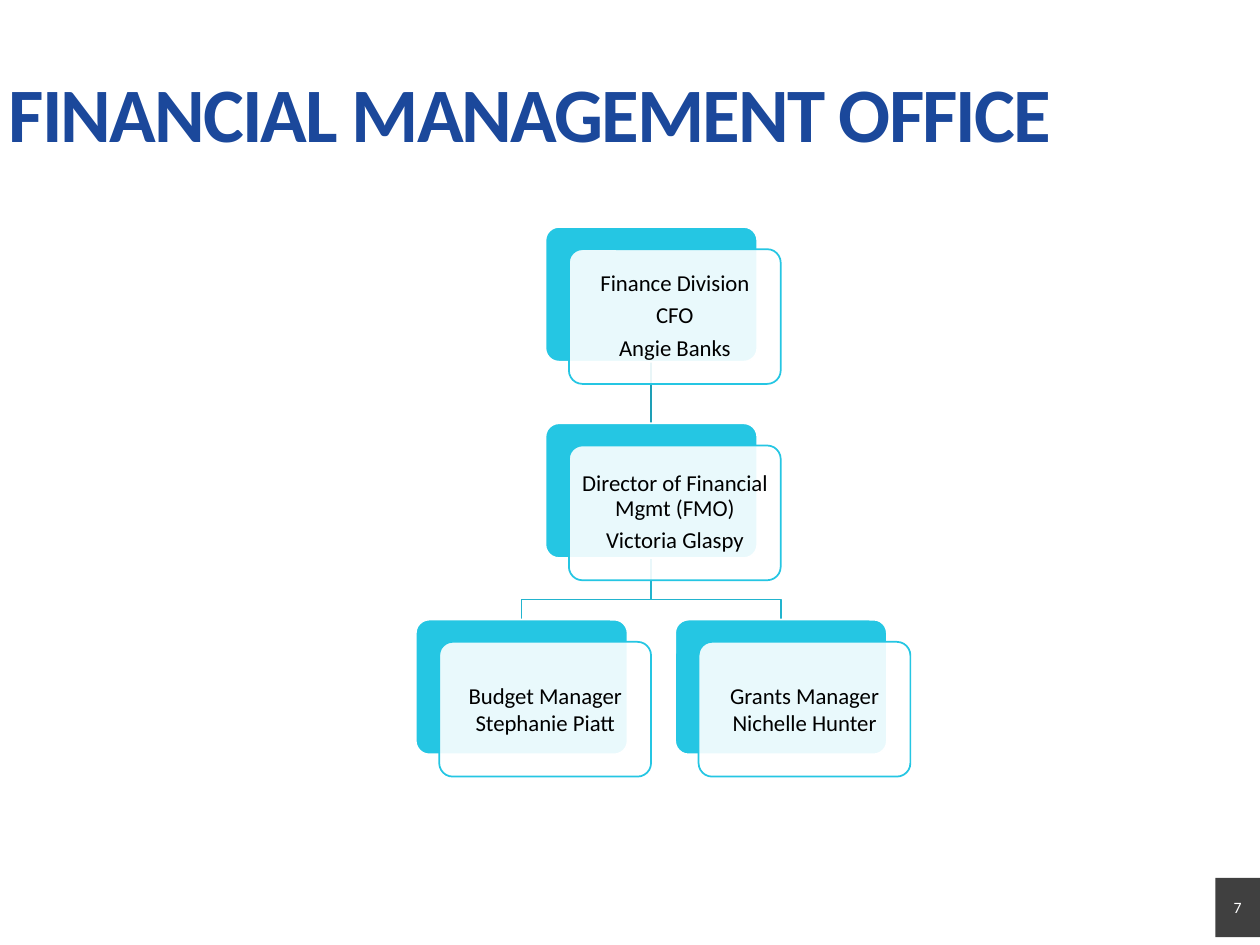
from pptx import Presentation
from pptx.util import Pt
from pptx.dml.color import RGBColor as RGB
from pptx.enum.shapes import MSO_SHAPE as Shape, MSO_CONNECTOR as Link
from pptx.enum.text import PP_ALIGN as Align, MSO_ANCHOR as Anchor, MSO_AUTO_SIZE as Fit
from pptx.oxml.ns import qn
from lxml.etree import SubElement as Sub
from dataclasses import dataclass

TITLE = "FINANCIAL MANAGEMENT OFFICE"
PAGE = "7"
STAFF = [
    dict(row=0, col=0, boss=None, gap=True,
         text=["Finance Division", "CFO", "Angie Banks"]),
    dict(row=1, col=0, boss=0, gap=True,
         text=["Director of Financial Mgmt (FMO)", "Victoria Glaspy"]),
    dict(row=2, col=-1, boss=1, gap=False,
         text=["Budget Manager", "Stephanie Piatt"]),
    dict(row=2, col=1, boss=1, gap=False,
         text=["Grants Manager", "Nichelle Hunter"]),
]


@dataclass
class Theme:
    font: str = "Calibri"
    title: str = "1B489B"
    card: str = "25C6E3"
    stem: str = "1E9FB6"
    fork: str = "22B4CE"
    badge: str = "404040"
    white: str = "FFFFFF"
    black: str = "000000"
    big: int = 44
    body: int = 13
    small: int = 9


T = Theme()
MID, TOP = 372.2, 129.7
WIDE, HIGH = 121, 77
STEP, PITCH = 74.1, 112.2
DX, DY = 13.4, 12.7
BEND = 23.7


def style(frame, size, color, bold=False):
    for para in frame.paragraphs:
        for run in para.runs:
            font = run.font
            font.name, font.size, font.bold = T.font, Pt(size), bold
            font.color.rgb = RGB.from_string(color)


def inset(frame, x, y):
    frame.margin_left = frame.margin_right = Pt(x)
    frame.margin_top = frame.margin_bottom = Pt(y)


def box(slide, kind, x, y, w, h, fill, line=None):
    item = slide.shapes.add_shape(kind, Pt(x), Pt(y), Pt(w), Pt(h))
    item.shadow.inherit = False
    item.fill.solid()
    item.fill.fore_color.rgb = RGB.from_string(fill)
    if line:
        item.adjustments[0] = 0.1
        ink(item, line)
    else:
        item.line.fill.background()
    return item


def ink(item, color):
    item.line.color.rgb = RGB.from_string(color)
    item.line.width = Pt(1)


def spot(post):
    return MID + post["col"] * STEP, TOP + post["row"] * PITCH


def card(slide, post):
    x, y = spot(post)
    x -= WIDE / 2
    back = box(slide, Shape.ROUNDED_RECTANGLE, x, y, WIDE, HIGH, T.card, T.white)
    front = box(slide, Shape.ROUNDED_RECTANGLE, x + DX, y + DY, WIDE, HIGH,
                T.white, T.card)
    tint = front.fill._xPr.find(qn("a:solidFill"))[0]
    Sub(tint, qn("a:alpha")).set("val", "90000")
    frame = front.text_frame
    frame.word_wrap = True
    frame.vertical_anchor = Anchor.MIDDLE
    inset(frame, 3.6, 3.6)
    frame.text = "\n".join(post["text"])
    for para in frame.paragraphs:
        para.alignment = Align.CENTER
        if post["gap"]:
            para.line_spacing = 0.9
            para.space_after = Pt(4.55)
    style(frame, T.body, T.black)
    return back


def join(slide, post, backs):
    boss = STAFF[post["boss"]]
    (x, y), (end, foot) = spot(boss), spot(post)
    y += HIGH
    if x == end:
        line = slide.shapes.add_connector(Link.STRAIGHT, Pt(x), Pt(y), Pt(end), Pt(foot))
        line.begin_connect(backs[post["boss"]], 2)
        line.end_connect(backs[STAFF.index(post)], 0)
        Sub(line._element.spPr, qn("a:effectLst"))
        ink(line, T.stem)
    else:
        path = slide.shapes.build_freeform(Pt(x), Pt(y))
        turns = [(x, y + BEND), (end, y + BEND), (end, foot)]
        path.add_line_segments([(Pt(a), Pt(b)) for a, b in turns], close=False)
        line = path.convert_to_shape()
        line.shadow.inherit = False
        line.fill.background()
        ink(line, T.fork)
    slide.shapes._spTree.insert(2, line._element)


def head(slide):
    title = slide.shapes.title
    title.left, title.top, title.width, title.height = Pt(0), Pt(40.3), Pt(720), Pt(35.3)
    frame = title.text_frame
    frame.text = TITLE
    frame.word_wrap = True
    frame.auto_size = Fit.NONE
    frame.vertical_anchor = Anchor.TOP
    inset(frame, 5, 2.9)
    para = frame.paragraphs[0]
    para.alignment = Align.LEFT
    para.line_spacing = 0.9
    style(frame, T.big, T.title, True)
    para.runs[0].font._element.set("spc", "-110")


def badge(slide):
    frame = box(slide, Shape.RECTANGLE, 694.5, 501.7, 25.5, 33.8, T.badge).text_frame
    frame.text = PAGE
    frame.vertical_anchor = Anchor.MIDDLE
    inset(frame, 0, 0)
    frame.paragraphs[0].alignment = Align.CENTER
    style(frame, T.small, T.white)


def main():
    deck = Presentation()
    deck.slide_width, deck.slide_height = Pt(720), Pt(540)
    slide = deck.slides.add_slide(deck.slide_layouts[5])
    head(slide)
    backs = [card(slide, post) for post in STAFF]
    for post in STAFF:
        if post["boss"] is not None:
            join(slide, post, backs)
    badge(slide)
    deck.save("out.pptx")


if __name__ == "__main__":
    main()
